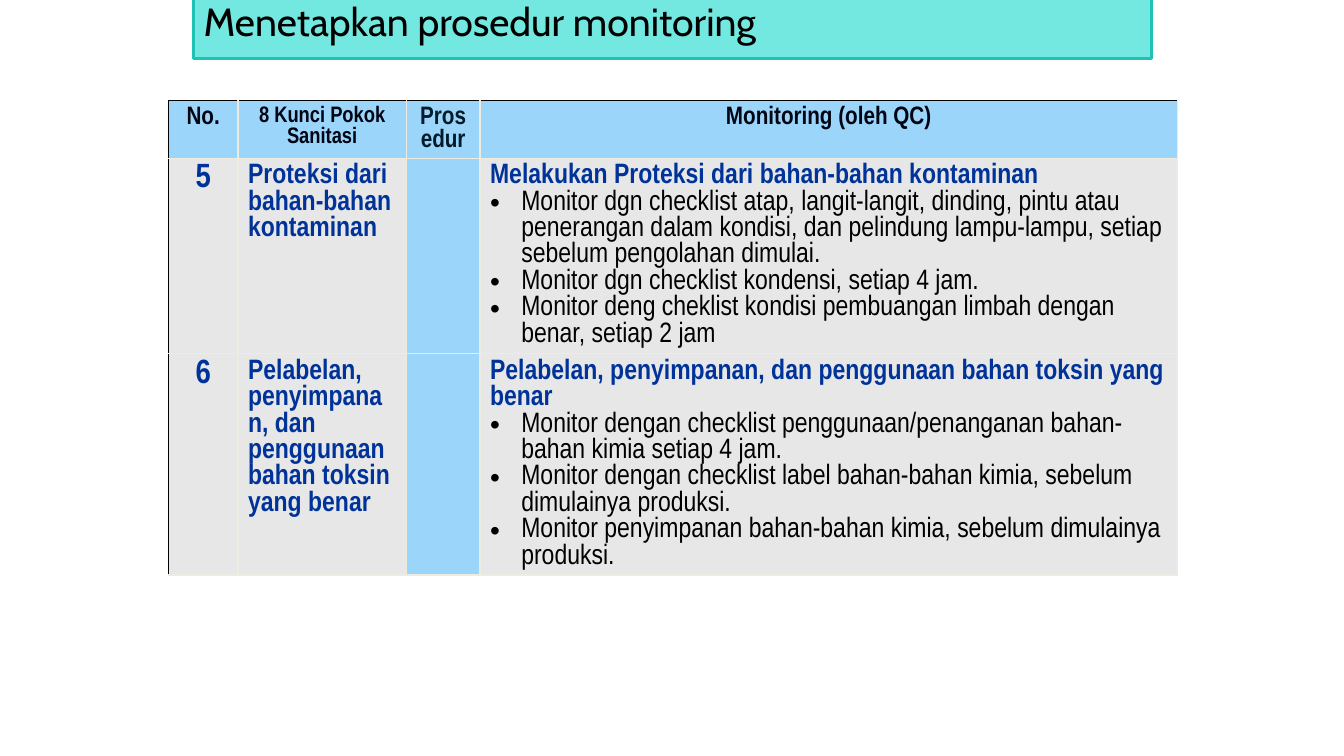
import dataclasses

import lxml.etree
import pptx
import pptx.dml.color
import pptx.enum.text
import pptx.oxml
import pptx.oxml.ns
import pptx.table
import pptx.text.text
import pptx.util

RGB = pptx.dml.color.RGBColor
ALIGN = pptx.enum.text.PP_ALIGN
BLACK = RGB(0x00, 0x00, 0x00)
INK = RGB(0x00, 0x05, 0x14)
NAVY = RGB(0x02, 0x1B, 0x2B)
BLUE = RGB(0x00, 0x33, 0x99)
SKY = RGB(0x9B, 0xD5, 0xFA)
GREY = RGB(0xE7, 0xE7, 0xE7)
CREAM = RGB(0xEE, 0xEC, 0xE1)
MINT = RGB(0x72, 0xE8, 0xE0)
TEAL = RGB(0x20, 0xC2, 0xB6)

WIDTH = pptx.util.Inches(13.33)
HEIGHT = pptx.util.Inches(7.5)
INDENT = pptx.util.Inches(0.31)
# Shares of the slide's size, in percent
COLS = (5.18, 12.53, 5.48, 51.9)
ROWS = (7.6, 25.87, 29.2)
PROC = 2


@dataclasses.dataclass(frozen=True)
class Line:
    text: str
    size: int = 20
    color: RGB = BLUE
    bold: bool = True
    center: bool = False
    bullet: bool = False


@dataclasses.dataclass(frozen=True)
class Key:
    number: str
    name: str
    task: str
    checks: tuple[str, ...]


HEADS = (
    Line("No.", 18, INK, center=True),
    Line("8 Kunci Pokok Sanitasi", 16, INK, center=True),
    Line("Prosedur", 18, NAVY, center=True),
    Line("Monitoring (oleh QC)", 18, INK, center=True),
)
KEYS = (
    Key("5", "Proteksi dari bahan-bahan kontaminan",
        "Melakukan Proteksi dari bahan-bahan kontaminan",
        ("Monitor dgn checklist atap, langit-langit, dinding, pintu atau penerangan "
         "dalam kondisi, dan pelindung lampu-lampu, setiap sebelum pengolahan dimulai.",
         "Monitor dgn checklist kondensi, setiap 4 jam.",
         "Monitor deng cheklist kondisi pembuangan limbah dengan benar, setiap 2 jam")),
    Key("6", "Pelabelan, penyimpanan, dan penggunaan bahan toksin yang benar",
        "Pelabelan, penyimpanan, dan penggunaan bahan toksin yang benar",
        ("Monitor dengan checklist penggunaan/penanganan bahan-bahan kimia setiap 4 jam.",
         "Monitor dengan checklist label bahan-bahan kimia, sebelum dimulainya produksi.",
         "Monitor penyimpanan bahan-bahan kimia, sebelum dimulainya produksi.")),
)


def across(share: float) -> int:
    return round(WIDTH * share / 100)


def down(share: float) -> int:
    return round(HEIGHT * share / 100)


def tag(name: str) -> str:
    return pptx.oxml.ns.qn(f"a:{name}")


def hang(para: pptx.text.text._Paragraph, indent: int) -> None:
    """Give the paragraph a hanging indent."""
    props = para._p.get_or_add_pPr()
    props.set("marL", str(indent))
    props.set("indent", str(-indent))


def write(para: pptx.text.text._Paragraph, line: Line) -> None:
    if line.bullet:
        hang(para, INDENT)
        props = para._p.get_or_add_pPr()
        lxml.etree.SubElement(props, tag("buFont"), typeface="Arial")
        lxml.etree.SubElement(props, tag("buChar"), char="•")
    para.alignment = ALIGN.CENTER if line.center else ALIGN.LEFT
    run = para.add_run()
    run.text = line.text
    run.font.name = "Arial Narrow"
    run.font.size = pptx.util.Pt(line.size)
    run.font.bold = line.bold
    run.font.color.rgb = line.color


def border(cell: pptx.table._Cell, row: int, col: int) -> None:
    """Draw cream edges, black along the table's left and top."""
    props = cell._tc.get_or_add_tcPr()
    edges = {"lnL": BLACK if col == 0 else CREAM, "lnR": CREAM,
             "lnT": BLACK if row == 0 else CREAM, "lnB": CREAM}
    for place, (name, color) in enumerate(edges.items()):
        edge = lxml.etree.Element(tag(name), w=str(pptx.util.Pt(1)))
        fill = lxml.etree.SubElement(edge, tag("solidFill"))
        lxml.etree.SubElement(fill, tag("srgbClr"), val=str(color))
        props.insert(place, edge)


def fill_cell(table: pptx.table.Table, row: int, col: int,
              lines: tuple[Line, ...]) -> None:
    cell = table.cell(row, col)
    cell.fill.solid()
    cell.fill.fore_color.rgb = SKY if row == 0 or col == PROC else GREY
    border(cell, row, col)
    frame = cell.text_frame
    for place, line in enumerate(lines):
        write(frame.add_paragraph() if place else frame.paragraphs[0], line)


def add_title(slide: pptx.slide.Slide) -> None:
    title = slide.shapes.title
    title.left, title.top = across(14.4), down(-2.27)
    title.width, title.height = across(71.27), down(10)
    props = title._element.spPr
    shape = lxml.etree.SubElement(props, tag("prstGeom"), prst="round2DiagRect")
    lxml.etree.SubElement(shape, tag("avLst"))
    title.fill.solid()
    title.fill.fore_color.rgb = MINT
    title.line.color.rgb = TEAL
    title.line.width = pptx.util.Pt(2)
    frame = title.text_frame
    frame.auto_size = pptx.enum.text.MSO_AUTO_SIZE.NONE
    frame.vertical_anchor = pptx.enum.text.MSO_ANCHOR.MIDDLE
    para = frame.paragraphs[0]
    para.alignment = ALIGN.LEFT
    hang(para, pptx.util.Inches(0.88))
    run = para.add_run()
    run.text = "Menetapkan prosedur monitoring"
    run.font.name = "Cabin"
    run.font.size = pptx.util.Pt(28)
    run.font.color.rgb = BLACK


def add_keys(slide: pptx.slide.Slide) -> None:
    frame = slide.shapes.add_table(len(ROWS), len(COLS), across(12.53), down(13.33),
                                   across(sum(COLS)), down(sum(ROWS)))
    table = frame.table
    for col, share in zip(table.columns, COLS):
        col.width = across(share)
    for row, share in zip(table.rows, ROWS):
        row.height = down(share)
    for col, head in enumerate(HEADS):
        fill_cell(table, 0, col, (head,))
    for row, key in enumerate(KEYS, 1):
        checks = tuple(Line(check, color=BLACK, bold=False, bullet=True)
                       for check in key.checks)
        cells = ((Line(key.number, 24, center=True),), (Line(key.name),), (),
                 (Line(key.task), *checks))
        for col, lines in enumerate(cells):
            fill_cell(table, row, col, lines)


def main() -> None:
    deck = pptx.Presentation()
    deck.slide_width, deck.slide_height = WIDTH, HEIGHT
    slide = deck.slides.add_slide(deck.slide_layouts.get_by_name("Title Only"))
    add_title(slide)
    add_keys(slide)
    deck.save("out.pptx")


if __name__ == "__main__":
    main()
